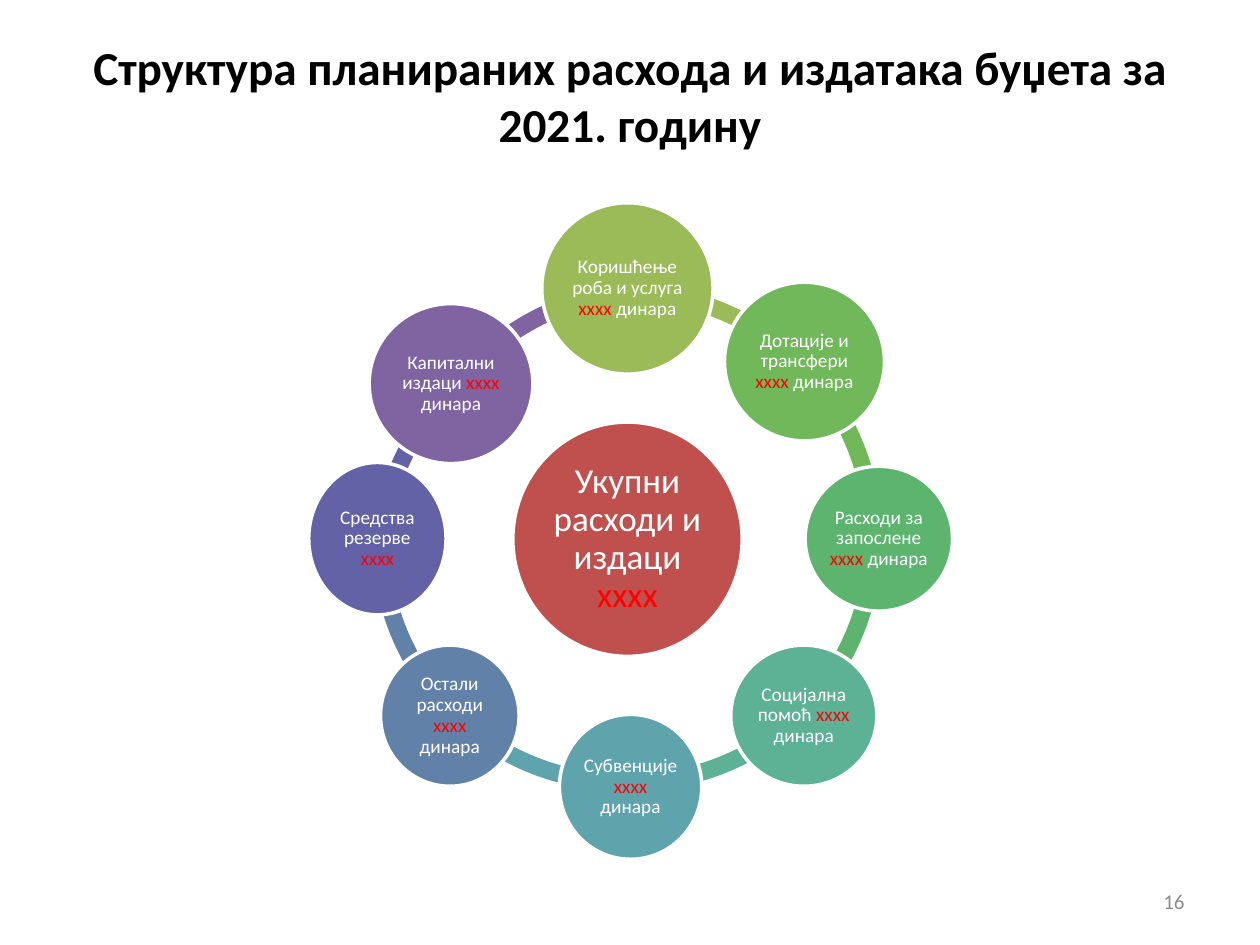
"""Build the slide on the structure of planned budget expenditure for 2021."""
from collections import namedtuple

from pptx import Presentation
from pptx.dml.color import RGBColor
from pptx.enum.shapes import MSO_SHAPE
from pptx.enum.text import MSO_ANCHOR, MSO_AUTO_SIZE, PP_ALIGN
from pptx.util import Inches, Pt

Theme = namedtuple("Theme", "font title total item number black white red grey total_fill")
theme = Theme("Calibri", 27, 20, 11, 12, "000000", "FFFFFF", "FF0000", "8C8C8C", "C0504D")
Item = namedtuple("Item", "text color circle arc_at arc")
AMOUNT = "xxxx"
ARC_SIZE, ARC_WIDTH = 4.05, 0.034
ANGLE_UNIT = 0.6

items = [
    Item("Коришћење роба и услуга xxxx динара", "9BBB59", (4.3, 1.61, 1.36, 1.36), (2.95, 2.25), (270, 315)),
    Item("Дотације и трансфери xxxx динара", "70B85A", (5.75, 2.24, 1.27, 1.26), (2.95, 2.25), (315, 0)),
    Item("Расходи за запослене xxxx динара", "5CB46F", (6.39, 3.7, 1.17, 1.15), (2.95, 2.25), (0, 45)),
    Item("Социјална помоћ xxxx динара", "5DB195", (5.8, 5.12, 1.16, 1.12), (2.98, 2.23), (45.93, 89.8)),
    Item("Субвенције xxxx динара", "5FA4AD", (4.44, 5.67, 1.13, 1.15), (2.93, 2.23), (88.5, 134.1)),
    Item("Остали расходи xxxx динара", "6181A9", (3.02, 5.12, 1.1, 1.12), (2.95, 2.25), (135, 180)),
    Item("Средства резерве xxxx", "6362A6", (2.45, 3.67, 1.09, 1.21), (2.94, 2.45), (185.81, 225.94)),
    Item("Капитални издаци xxxx динара", "8064A2", (2.93, 2.41, 1.3, 1.27), (3.13, 2.24), (217.83, 264.88)),
]


def write(shape, text, size, color, bold=False, align=PP_ALIGN.CENTER, inset=None, spacing=None):
    tf = shape.text_frame
    tf.word_wrap = True
    tf.auto_size = MSO_AUTO_SIZE.NONE
    tf.vertical_anchor = MSO_ANCHOR.MIDDLE
    if inset is not None:
        tf.margin_left = tf.margin_right = tf.margin_top = tf.margin_bottom = Inches(inset)
    p = tf.paragraphs[0]
    p.alignment = align
    p.line_spacing = spacing
    for part in text.partition(AMOUNT):
        if part:
            r = p.add_run()
            r.text = part
            r.font.name, r.font.size, r.font.bold = theme.font, Pt(size), bold
            r.font.color.rgb = RGBColor.from_string(theme.red if part == AMOUNT else color)


def add_shape(kind, box, fill, outlined=False):
    sp = s.shapes.add_shape(kind, *map(Inches, box))
    sp.shadow.inherit = False
    sp.fill.solid()
    sp.fill.fore_color.rgb = RGBColor.from_string(fill)
    if outlined:
        sp.line.color.rgb = RGBColor.from_string(theme.white)
        sp.line.width = Pt(2)
    else:
        sp.line.fill.background()
    return sp


prs = Presentation()
prs.slide_width, prs.slide_height = Inches(10), Inches(7.5)
s = prs.slides.add_slide(prs.slide_layouts[5])

title = s.shapes.title
title.left, title.top, title.width, title.height = map(Inches, (0.5, 0.29, 9, 0.93))
write(title, "Структура планираних расхода и издатака буџета за 2021. годину",
      theme.title, theme.black, bold=True)

for item in reversed(items):
    arc = add_shape(MSO_SHAPE.BLOCK_ARC, (*item.arc_at, ARC_SIZE, ARC_SIZE), item.color)
    start, end = item.arc
    arc.adjustments[0] = start * ANGLE_UNIT
    arc.adjustments[1] = end * ANGLE_UNIT
    arc.adjustments[2] = ARC_WIDTH

total = add_shape(MSO_SHAPE.OVAL, (4.07, 3.35, 1.82, 1.86), theme.total_fill, outlined=True)
write(total, "Укупни расходи и издаци xxxx", theme.total, theme.white, inset=0.03, spacing=0.9)

for item in items:
    circle = add_shape(MSO_SHAPE.OVAL, item.circle, item.color, outlined=True)
    write(circle, item.text, theme.item, theme.white, inset=0.02, spacing=0.9)

number = s.shapes.add_textbox(*map(Inches, (7.17, 6.95, 2.33, 0.4)))
write(number, "16", theme.number, theme.grey, align=PP_ALIGN.RIGHT)

prs.save("out.pptx")
